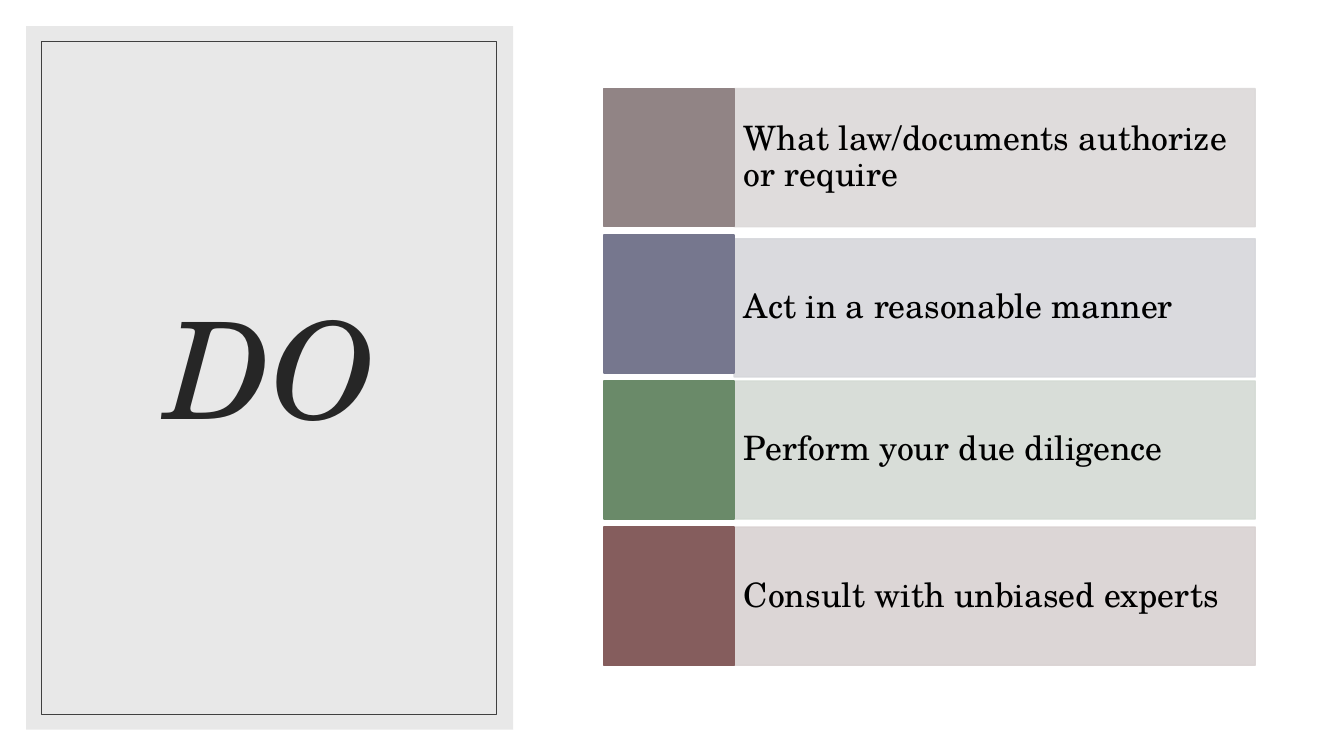
"""Build the DO slide: a framed title beside four colour-keyed duties."""
from lxml.etree import SubElement
from pptx import Presentation
from pptx.dml.color import RGBColor
from pptx.enum.shapes import MSO_SHAPE
from pptx.enum.text import MSO_ANCHOR, PP_ALIGN
from pptx.oxml.ns import qn
from pptx.util import Inches, Pt

FONT = "TeX Gyre Schola"
PANEL_GRAY = RGBColor(0xD9, 0xD9, 0xD9)
FRAME_GRAY = RGBColor(0x40, 0x40, 0x40)
TITLE_GRAY = RGBColor(0x26, 0x26, 0x26)
BLACK = RGBColor(0x00, 0x00, 0x00)
TAUPE = RGBColor(0x91, 0x84, 0x85)
SLATE = RGBColor(0x76, 0x77, 0x8E)
GREEN = RGBColor(0x6A, 0x8A, 0x69)
MAROON = RGBColor(0x85, 0x5D, 0x5D)
PALE_TAUPE = RGBColor(0xDC, 0xD9, 0xD9)
PALE_SLATE = RGBColor(0xD6, 0xD7, 0xDB)
PALE_GREEN = RGBColor(0xD4, 0xDA, 0xD4)
PALE_MAROON = RGBColor(0xD9, 0xD2, 0xD2)

DUTIES = [
    ("What law/documents authorize or require", TAUPE, PALE_TAUPE, 0),
    ("Act in a reasonable manner", SLATE, PALE_SLATE, 0.04),
    ("Perform your due diligence", GREEN, PALE_GREEN, 0),
    ("Consult with unbiased experts", MAROON, PALE_MAROON, 0),
]
FIRST_TOP, ROW_PITCH, ROW_HEIGHT = 0.88, 1.45, 1.37


def add_rectangle(left, top, width, height, fill=None, line=None, line_width=1, opacity=100):
    """Add a flat rectangle with optional fill, outline and opacity."""
    shape = slide.shapes.add_shape(
        MSO_SHAPE.RECTANGLE, Inches(left), Inches(top), Inches(width), Inches(height))
    shape.shadow.inherit = False
    if fill is None:
        shape.fill.background()
    else:
        shape.fill.solid()
        shape.fill.fore_color.rgb = fill
    if line is None:
        shape.line.fill.background()
    else:
        shape.line.color.rgb = line
        shape.line.width = Pt(line_width)
    if opacity < 100:
        for color in shape.element.spPr.iter(qn("a:srgbClr")):
            SubElement(color, qn("a:alpha"), val=str(opacity * 1000))
    return shape


def format_text(text_frame, size, color, alignment, italic=None):
    """Centre the text vertically and style its only paragraph."""
    text_frame.word_wrap = True
    text_frame.vertical_anchor = MSO_ANCHOR.MIDDLE
    paragraph = text_frame.paragraphs[0]
    paragraph.alignment = alignment
    paragraph.line_spacing = 0.9
    font = paragraph.runs[0].font
    font.name = FONT
    font.size = Pt(size)
    font.italic = italic
    font.color.rgb = color


presentation = Presentation()
presentation.slide_width = Inches(13.33)
presentation.slide_height = Inches(7.5)
slide = presentation.slides.add_slide(presentation.slide_layouts[5])

title_panel = add_rectangle(0.26, 0.26, 4.83, 6.98, fill=PANEL_GRAY, opacity=60)

title = slide.shapes.title
title.left, title.top = Inches(0.63), Inches(0.61)
title.width, title.height = Inches(4.12), Inches(6.24)
title.text_frame.text = "DO"
format_text(title.text_frame, 96, TITLE_GRAY, PP_ALIGN.CENTER, italic=True)
title_panel.element.addnext(title.element)

add_rectangle(0.41, 0.41, 4.51, 6.68, line=FRAME_GRAY, line_width=0.5)

for index, (duty, key_color, bar_color, bar_offset) in enumerate(DUTIES):
    top = FIRST_TOP + index * ROW_PITCH
    bar = add_rectangle(7.28, top + bar_offset, 5.17, ROW_HEIGHT,
                        fill=bar_color, line=bar_color, opacity=90)
    text_frame = bar.text_frame
    text_frame.margin_left = text_frame.margin_right = Inches(0.1)
    text_frame.margin_top = text_frame.margin_bottom = Inches(0.35)
    text_frame.text = duty
    format_text(text_frame, 24, BLACK, PP_ALIGN.LEFT)
    add_rectangle(5.99, top, 1.29, ROW_HEIGHT, fill=key_color, line=key_color)

presentation.save("out.pptx")
